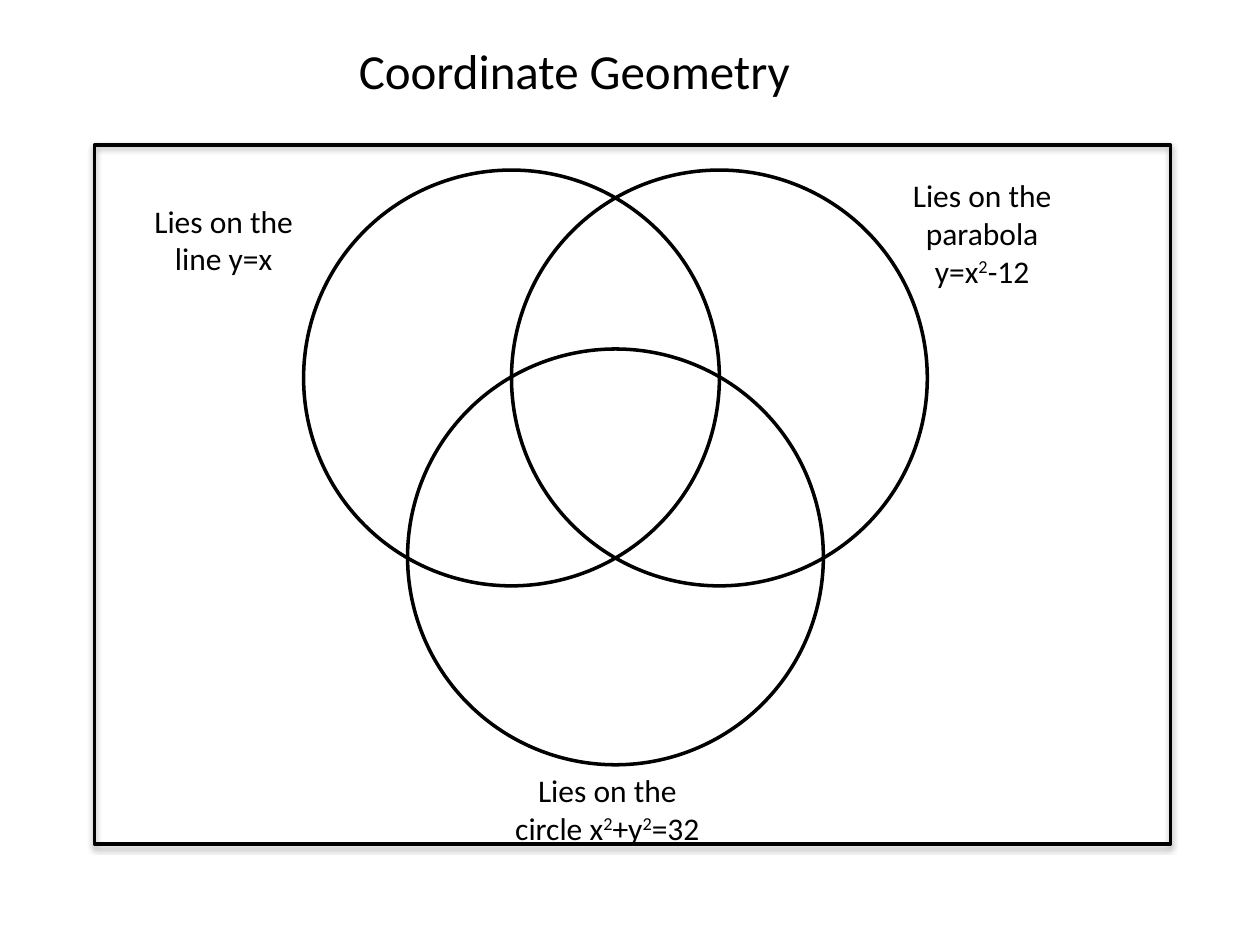
from lxml.etree import SubElement
from pptx import Presentation
from pptx.dml.color import RGBColor
from pptx.enum.shapes import MSO_SHAPE
from pptx.enum.text import MSO_AUTO_SIZE, PP_ALIGN
from pptx.oxml.ns import qn
from pptx.util import Inches, Pt

COLORS = {"ink": "000000", "shadow": "000000"}


class VennSlide:
    """Holds the style and the current slide."""

    font_name = "Calibri"
    line_width = Pt(2)

    def __init__(self, presentation):
        self.slide = presentation.slides.add_slide(presentation.slide_layouts[6])
        self.ink = RGBColor.from_string(COLORS["ink"])

    def outline(self, shapes, kind, left, top, width, height):
        shape = shapes.add_shape(
            kind, Inches(left), Inches(top), Inches(width), Inches(height))
        shape.shadow.inherit = False
        shape.fill.background()
        shape.line.color.rgb = self.ink
        shape.line.width = self.line_width
        return shape

    def circles(self, positions, diameter):
        group = self.slide.shapes.add_group_shape()
        for left, top in positions:
            self.outline(group.shapes, MSO_SHAPE.OVAL, left, top, diameter, diameter)

    def frame(self, left, top, width, height):
        shape = self.outline(
            self.slide.shapes, MSO_SHAPE.RECTANGLE, left, top, width, height)
        effects = shape._element.spPr.find(qn("a:effectLst"))
        shadow = SubElement(
            effects, qn("a:outerShdw"), blurRad=str(Pt(3.1)), dist=str(Pt(1.8)),
            dir="5400000", rotWithShape="0")
        color = SubElement(shadow, qn("a:srgbClr"), val=COLORS["shadow"])
        SubElement(color, qn("a:alpha"), val="35000")

    def text(self, left, top, width, height, parts, size=18,
             align=PP_ALIGN.CENTER, wrap=True):
        """Every second part is a superscript; a newline is a line break."""
        box = self.slide.shapes.add_textbox(
            Inches(left), Inches(top), Inches(width), Inches(height))
        frame = box.text_frame
        frame.word_wrap = wrap
        frame.auto_size = MSO_AUTO_SIZE.SHAPE_TO_FIT_TEXT
        paragraph = frame.paragraphs[0]
        paragraph.alignment = align
        for index, part in enumerate(parts):
            for number, line in enumerate(part.split("\n")):
                if number:
                    paragraph.add_line_break()
                run = paragraph.add_run()
                run.text = line
                run.font.name = self.font_name
                run.font.size = Pt(size)
                run.font.color.rgb = self.ink
                if index % 2:
                    run._r.get_or_add_rPr().set("baseline", "30000")


def main():
    presentation = Presentation()
    presentation.slide_width = Inches(10)
    presentation.slide_height = Inches(7.5)
    venn = VennSlide(presentation)

    # Three circles, each one radius from its neighbours
    diameter, left, top = 3.3, 2.41, 1.35
    radius = diameter / 2
    venn.circles([(left, top), (left + radius, top),
                  (left + radius / 2, top + 1.42)], diameter)

    # Circle labels
    venn.text(0.99, 1.55, 1.57, 0.71, ["Lies on the line y=x"])
    venn.text(6.78, 1.35, 2.03, 1.01, ["Lies on the parabola\ny=x", "2", "-12"])
    venn.text(3.93, 6.07, 1.78, 0.71,
              ["Lies on the circle x", "2", "+y", "2", "=32"])

    # Title
    venn.text(2.75, 0.27, 3.66, 0.57, ["Coordinate Geometry"], size=28,
              align=PP_ALIGN.LEFT, wrap=False)

    # Frame around the diagram
    venn.frame(0.75, 1.15, 8.54, 5.55)

    presentation.save("out.pptx")


if __name__ == "__main__":
    main()
